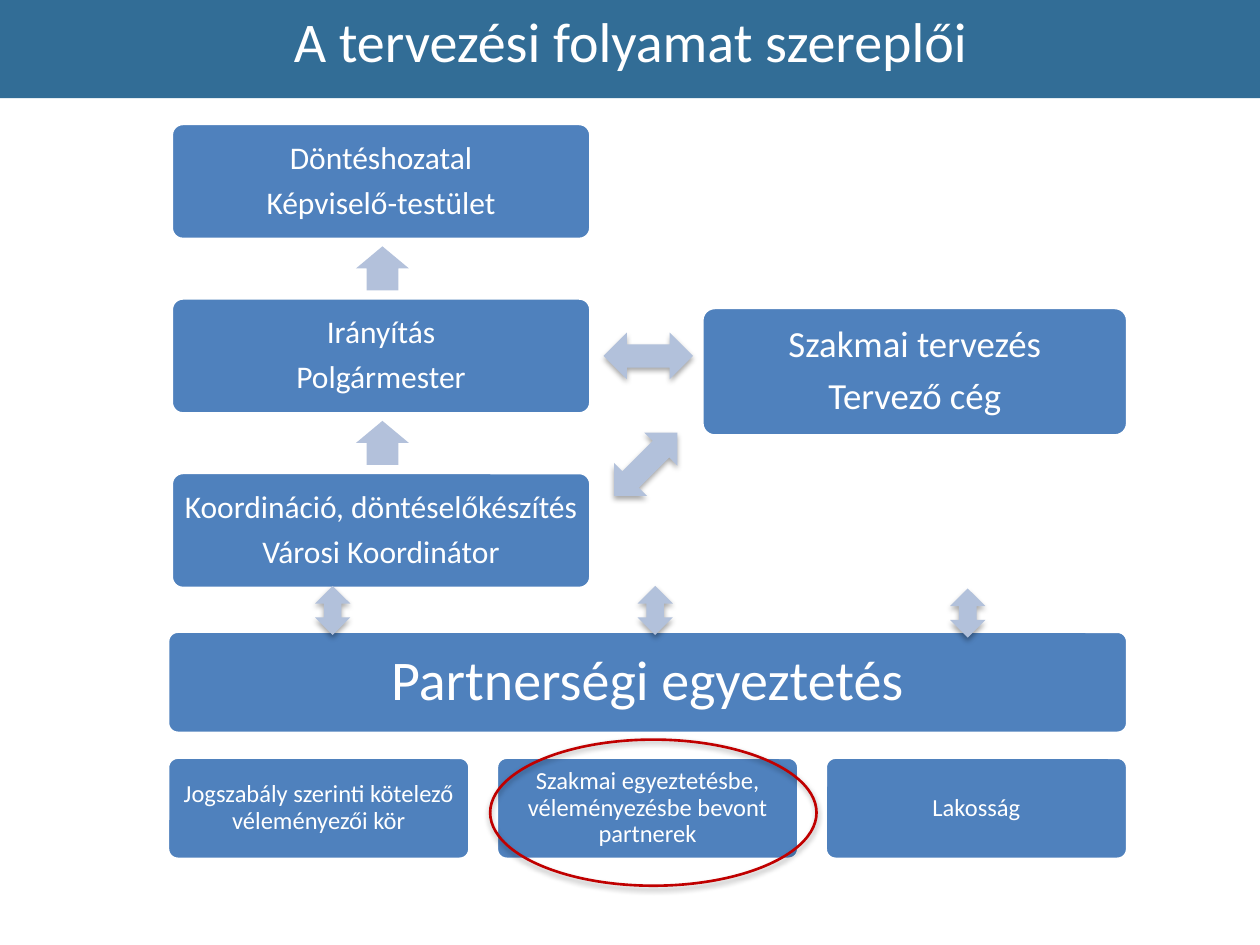
from lxml import etree
from pptx import Presentation
from pptx.dml.color import RGBColor
from pptx.enum import shapes, text
from pptx.oxml.ns import qn
from pptx.util import Inches, Pt

BANNER = RGBColor(0x14, 0x58, 0x87)
BOX = RGBColor(0x4F, 0x81, 0xBD)
STEP_ARROW = RGBColor(0xB3, 0xC1, 0xDB)
LINK_ARROW = RGBColor(0xB2, 0xC1, 0xDB)
RING = RGBColor(0xC0, 0x00, 0x00)
WHITE = RGBColor(0xFF, 0xFF, 0xFF)
KIND = shapes.MSO_SHAPE

deck = Presentation()
deck.slide_width, deck.slide_height = Inches(10), Inches(7.5)
slide = deck.slides.add_slide(deck.slide_layouts[5])


def add_figure(kind, place, color=None, shadow=False):
    figure = slide.shapes.add_shape(kind, *map(Inches, place))
    figure.shadow.inherit = False
    figure.line.fill.background()
    if color is None:
        figure.fill.background()
    else:
        figure.fill.solid()
        figure.fill.fore_color.rgb = color
    if shadow:
        effects = figure._element.spPr.find(qn("a:effectLst"))
        outer = etree.SubElement(effects, qn("a:outerShdw"), blurRad="40000",
                                 dist="23000", dir="5400000", rotWithShape="0")
        black = etree.SubElement(outer, qn("a:srgbClr"), val="000000")
        etree.SubElement(black, qn("a:alpha"), val="35000")
    return figure


def write_lines(frame, lines, size, formats):
    for name, value in formats.items():
        setattr(frame, name, value)
    frame.text = "\n".join(lines)
    for line in frame.paragraphs:
        line.alignment = text.PP_ALIGN.CENTER
        for name, value in {"name": "Calibri", "size": Pt(size)}.items():
            setattr(line.font, name, value)
        line.font.color.rgb = WHITE


banner = add_figure(KIND.RECTANGLE, (0, 0, 10, 0.78), BANNER)
banner_color = banner._element.spPr.find(qn("a:solidFill"))[0]
etree.SubElement(banner_color, qn("a:alpha"), val="87000")
slide.shapes._spTree.insert(2, banner._element)

heading = slide.shapes.title
for side, length in {"left": 1.33, "top": 0, "width": 7.35, "height": 0.64}.items():
    setattr(heading, side, Inches(length))
write_lines(heading.text_frame, ["A tervezési folyamat szereplői"], 32, {
    "word_wrap": True, "auto_size": text.MSO_AUTO_SIZE.NONE,
    "vertical_anchor": text.MSO_ANCHOR.TOP})

decision_levels = [
    ["Döntéshozatal", "Képviselő-testület"],
    ["Irányítás", "Polgármester"],
    ["Koordináció, döntéselőkészítés", "Városi Koordinátor"],
]
partner_groups = [
    "Jogszabály szerinti kötelező véleményezői kör",
    "Szakmai egyeztetésbe, véleményezésbe bevont partnerek",
    "Lakosság",
]
level_top, level_step = 0.98, 1.385
actors = [((1.36, level_top + level_step * i, 3.33, 0.92), lines, 18, 0.07)
          for i, lines in enumerate(decision_levels)]
actors.append(((5.57, 2.44, 3.38, 1.02), ["Szakmai tervezés", "Tervező cég"], 21, 0.09))
actors.append(((1.33, 5.01, 7.62, 0.81), ["Partnerségi egyeztetés"], 32, 0.13))
actors += [((1.33 + 2.61 * i, 6.01, 2.4, 0.81), [group], 14, 0.06)
           for i, group in enumerate(partner_groups)]

for place, lines, size, inset in actors:
    actor = add_figure(KIND.ROUNDED_RECTANGLE, place, BOX)
    actor.adjustments[0] = 0.1
    actor.line.color.rgb = WHITE
    actor.line.width = Pt(2)
    margins = {f"margin_{side}": Inches(inset) for side in ("left", "top", "right", "bottom")}
    write_lines(actor.text_frame, lines, size, {
        "word_wrap": True, "vertical_anchor": text.MSO_ANCHOR.MIDDLE, **margins})
    for line in actor.text_frame.paragraphs:
        line.line_spacing = 0.9
        line.space_after = Pt(round(size * 0.35, 1))

for i in range(2):
    step_up = add_figure(KIND.RIGHT_ARROW, (2.86, 1.92 + level_step * i, 0.35, 0.42), STEP_ARROW)
    step_up.adjustments[0] = 0.6
    step_up.rotation = 270

for place, angle in [
    ((4.96, 2.47, 0.37, 0.71), 90),
    ((4.94, 3.33, 0.37, 0.71), 45),
    ((2.5, 4.65, 0.28, 0.39), 0),
    ((5.06, 4.65, 0.28, 0.39), 0),
    ((7.54, 4.67, 0.28, 0.39), 0),
]:
    add_figure(KIND.UP_DOWN_ARROW, place, LINK_ARROW, shadow=True).rotation = angle

highlight = add_figure(KIND.OVAL, (3.89, 5.87, 2.59, 1.16), shadow=True)
highlight.line.color.rgb = RING
highlight.line.width = Pt(1.5)

deck.save("out.pptx")
